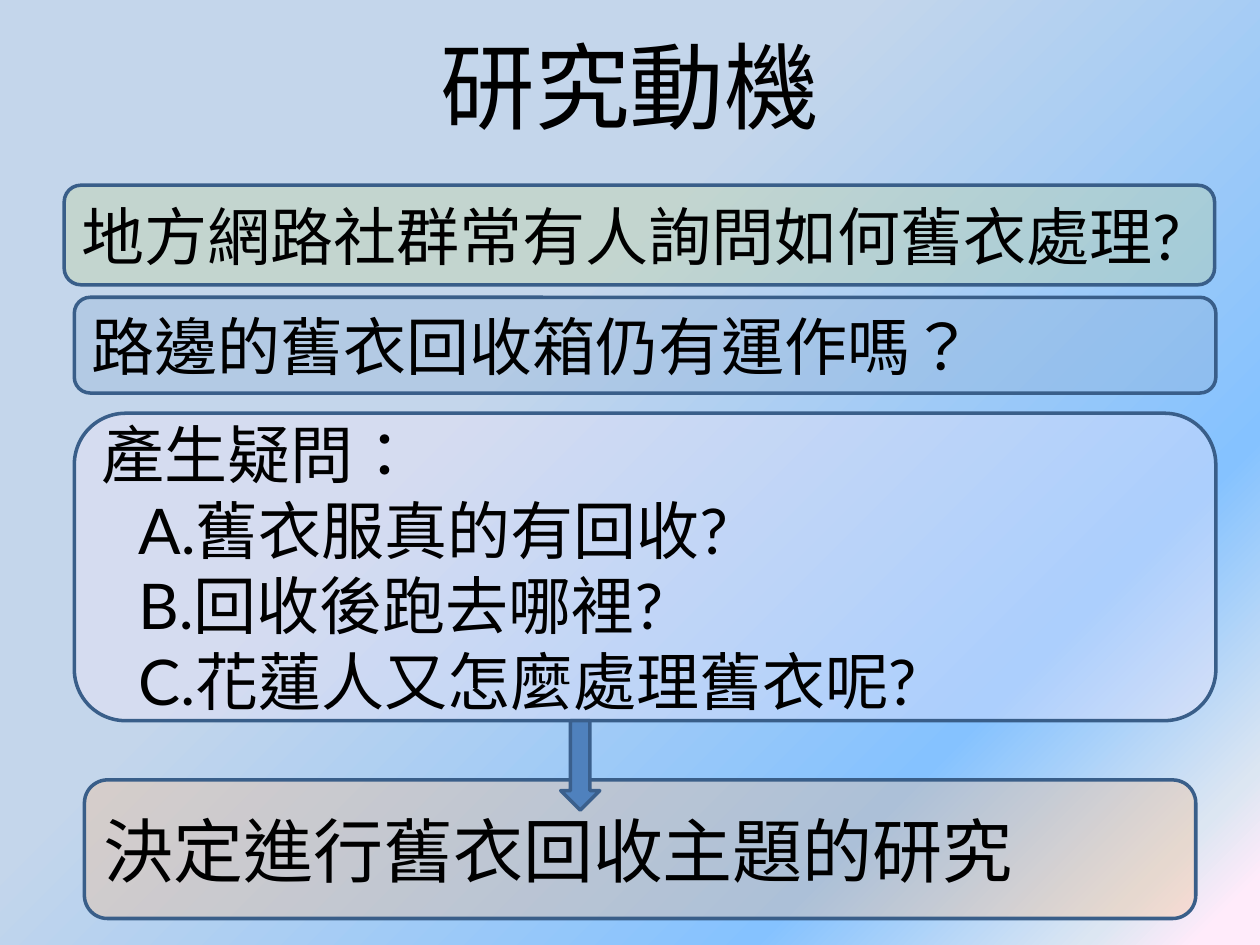
import pptx
import pptx.util
import pptx.dml.color
import pptx.enum.lang
import pptx.enum.shapes
import pptx.enum.text
import pptx.oxml
import pptx.oxml.ns
import lxml.etree

Inches, Pt = pptx.util.Inches, pptx.util.Pt
RGB = pptx.dml.color.RGBColor.from_string
SHAPE = pptx.enum.shapes.MSO_SHAPE
qn = pptx.oxml.ns.qn

THEME = {
    "ink": "000000", "border": "395E89", "arrow": "4F81BD", "arrow_border": "3A5F8C",
    "backdrop": [(39, "C4D6EB"), (77, "85C2FF"), (92, "DCE6F2"), (97, "FFEBFA")],
    "green": "C2D59B", "blue": "93B3D7", "lilac": "F8E9FB", "orange": "FABF8E",
    "opacity": 34, "line": 2,
    "title": 54, "decision": 40, "body": 36,
    "sans": "Noto Sans CJK SC", "latin": "Lato",
}


def write(frame, lines, size, font):
    frame.word_wrap = True
    frame.vertical_anchor = pptx.enum.text.MSO_ANCHOR.MIDDLE
    frame.text = "\n".join(lines)
    for paragraph in frame.paragraphs:
        paragraph.alignment = pptx.enum.text.PP_ALIGN.LEFT
        for run in paragraph.runs:
            run.font.size = Pt(size)
            run.font.name = font
            run.font.color.rgb = RGB(THEME["ink"])
            run.font.language_id = pptx.enum.lang.MSO_LANGUAGE_ID.TRADITIONAL_CHINESE
            lxml.etree.SubElement(run.font._element, qn("a:ea"), typeface=font)


def add_block(kind, place, fill, border):
    block = slide.shapes.add_shape(kind, *map(Inches, place))
    block.shadow.inherit = False
    block.fill.solid()
    block.fill.fore_color.rgb = RGB(fill)
    block.line.color.rgb = RGB(border)
    block.line.width = Pt(THEME["line"])
    return block


deck = pptx.Presentation()
deck.slide_width, deck.slide_height = Inches(10), Inches(7.5)
slide = deck.slides.add_slide(deck.slide_layouts[6])

backdrop = slide.background.fill
backdrop.gradient()
backdrop.gradient_angle = 315
stops = slide.background._cSld.find(".//" + qn("a:gsLst"))
for stop in list(stops):
    stops.remove(stop)
for position, color in THEME["backdrop"]:
    stop = lxml.etree.SubElement(stops, qn("a:gs"), pos=str(position * 1000))
    lxml.etree.SubElement(stop, qn("a:srgbClr"), val=color)

title = slide.shapes.add_textbox(Inches(0.5), Inches(0.05), Inches(9), Inches(1.25))
write(title.text_frame, ["研究動機"], THEME["title"], THEME["sans"])
title.text_frame.paragraphs[0].alignment = pptx.enum.text.PP_ALIGN.CENTER

panels = [
    ((0.51, 1.47, 9.13, 0.79), "green", "body", "latin",
     ["地方網路社群常有人詢問如何舊衣處理?"]),
    ((0.59, 2.36, 9.06, 0.76), "blue", "body", "latin",
     ["路邊的舊衣回收箱仍有運作嗎？"]),
    ((0.67, 6.19, 8.82, 1.1), "orange", "decision", "sans",
     ["決定進行舊衣回收主題的研究"]),
    ((0.59, 3.28, 9.06, 2.44), "lilac", "body", "latin",
     ["產生疑問：", "舊衣服真的有回收?", "回收後跑去哪裡?", "花蓮人又怎麼處理舊衣呢?"]),
]
for place, fill, size, font, lines in panels:
    panel = add_block(SHAPE.ROUNDED_RECTANGLE, place, THEME[fill], THEME["border"])
    tint = panel.fill._xPr.find(qn("a:solidFill"))[0]
    lxml.etree.SubElement(tint, qn("a:alpha"), val=str(THEME["opacity"] * 1000))
    write(panel.text_frame, lines, THEME[size], THEME[font])
    for question in panel.text_frame.paragraphs[1:]:
        properties = question._p.get_or_add_pPr()
        properties.set("marL", str(Inches(0.56)))
        properties.set("indent", str(Inches(-0.27)))
        bullet_color = lxml.etree.SubElement(properties, qn("a:buClr"))
        lxml.etree.SubElement(bullet_color, qn("a:srgbClr"), val=THEME["ink"])
        lxml.etree.SubElement(properties, qn("a:buFont"), typeface=THEME["latin"])
        lxml.etree.SubElement(properties, qn("a:buAutoNum"), type="alphaUcPeriod")

add_block(SHAPE.DOWN_ARROW, (4.45, 5.72, 0.31, 0.71), THEME["arrow"], THEME["arrow_border"])

deck.save("out.pptx")
